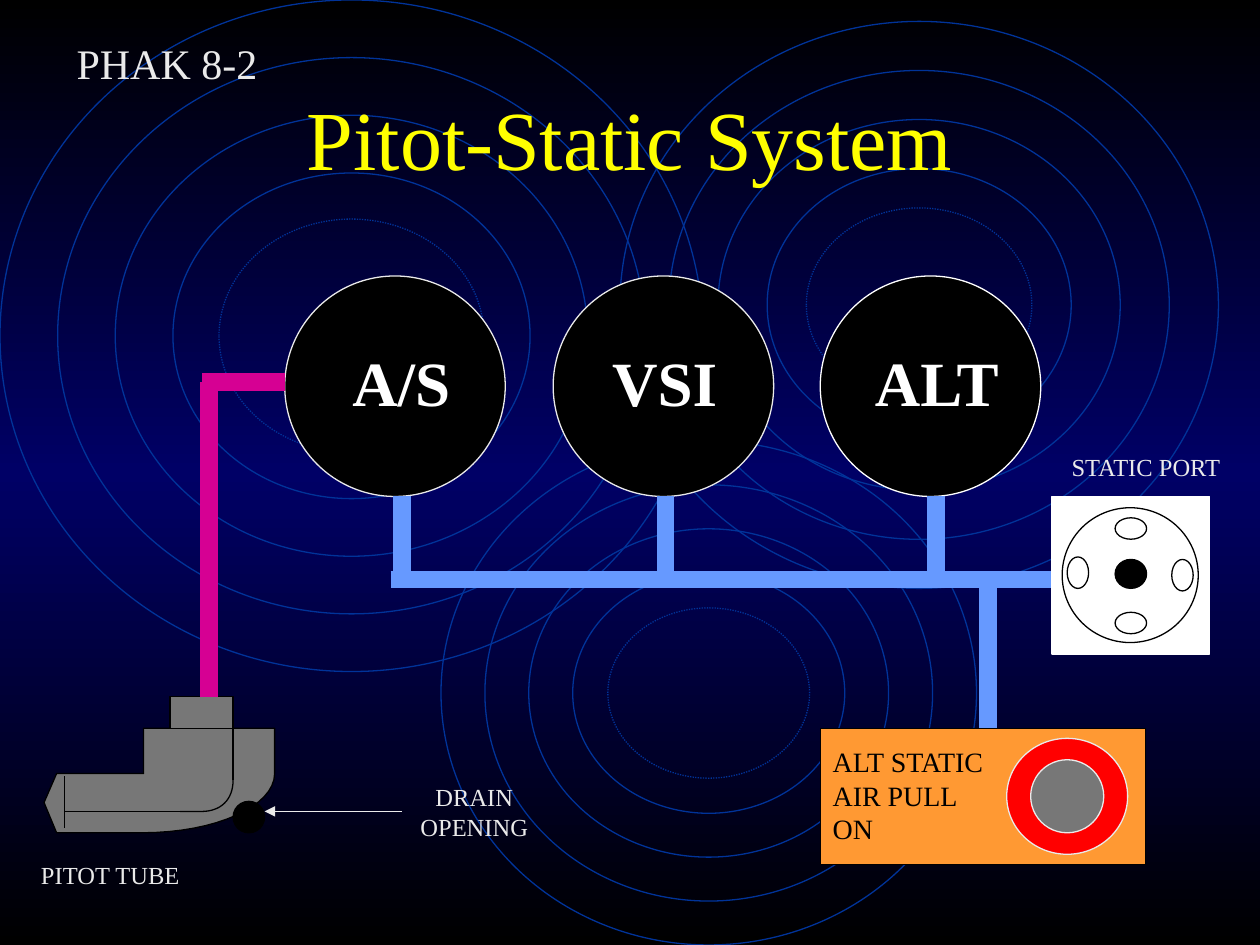
"""Build the Pitot-Static System slide."""
import copy

import lxml.etree
import pptx
import pptx.dml.color
import pptx.enum.dml
import pptx.enum.shapes
import pptx.enum.text
import pptx.oxml.ns
import pptx.util

Inches = pptx.util.Inches
RGBColor = pptx.dml.color.RGBColor
qn = pptx.oxml.ns.qn
OVAL = pptx.enum.shapes.MSO_SHAPE.OVAL
RECTANGLE = pptx.enum.shapes.MSO_SHAPE.RECTANGLE
LEFT = pptx.enum.text.PP_ALIGN.LEFT
CENTER = pptx.enum.text.PP_ALIGN.CENTER

BLACK = RGBColor(0x00, 0x00, 0x00)
WHITE = RGBColor(0xFF, 0xFF, 0xFF)
PALE = RGBColor(0xEA, 0xEA, 0xEA)
NAVY = RGBColor(0x00, 0x00, 0x66)
RING_BLUE = RGBColor(0x00, 0x33, 0x99)
STATIC_BLUE = RGBColor(0x66, 0x99, 0xFF)
PITOT_PINK = RGBColor(0xD6, 0x00, 0x93)
ORANGE = RGBColor(0xFF, 0x99, 0x33)
RED = RGBColor(0xFF, 0x00, 0x00)
GRAY = RGBColor(0x77, 0x77, 0x77)
YELLOW = RGBColor(0xFF, 0xFF, 0x00)
FONT = "Times New Roman"


def paint(shape, fill, line):
    shape.shadow.inherit = False
    if fill is None:
        shape.fill.background()
    else:
        shape.fill.solid()
        shape.fill.fore_color.rgb = fill
    shape.line.color.rgb = line
    shape.line.width = pptx.util.Pt(0.75)
    return shape


def draw_line(start, end, color, width=0.75):
    line = page.shapes.add_connector(
        pptx.enum.shapes.MSO_CONNECTOR.STRAIGHT,
        *[Inches(value) for value in start + end])
    line.line.color.rgb = color
    line.line.width = pptx.util.Pt(width)
    lxml.etree.SubElement(line._element.spPr, qn("a:effectLst"))
    return line


deck = pptx.Presentation()
deck.slide_width, deck.slide_height = Inches(10), Inches(7.5)
page = deck.slides.add_slide(deck.slide_layouts[5])

backdrop = page.background.fill
backdrop.gradient()
backdrop.gradient_angle = 270
stop_list = page._element.find(".//" + qn("a:gsLst"))
stop_list.append(copy.deepcopy(stop_list[0]))
for stop, position, color in zip(backdrop.gradient_stops, (0, 0.5, 1), (BLACK, NAVY, BLACK)):
    stop.position = position
    stop.color.rgb = color

for left, top, width, height in ((0, 0, 5.58, 5.33), (3.5, 3.5, 4.25, 4), (4.92, 0.17, 4.75, 4.5)):
    for step in (0, 1, 2, 3, 3.8):
        inset = step * 0.082 * width
        ring = paint(page.shapes.add_shape(
            OVAL, Inches(left + inset), Inches(top + inset),
            Inches(width - 2 * inset), Inches(height - 2 * inset)), None, RING_BLUE)
    ring.line.dash_style = pptx.enum.dml.MSO_LINE.ROUND_DOT

for left, outline in ((2.26, PALE), (4.39, PALE), (6.51, WHITE)):
    paint(page.shapes.add_shape(OVAL, Inches(left), Inches(2.19), Inches(1.75), Inches(1.75)),
          BLACK, outline)

for x in (3.19, 5.28, 7.43):
    draw_line((x, 3.94), (x, 4.53), STATIC_BLUE, 10)
draw_line((3.1, 4.6), (8.35, 4.6), STATIC_BLUE, 10)
draw_line((7.84, 4.6), (7.84, 5.78), STATIC_BLUE, 10)

static_port = [
    (RECTANGLE, (8.35, 3.94, 1.25, 1.25), WHITE, WHITE),
    (OVAL, (8.43, 4.03, 1.08, 1.07), None, BLACK),
    (OVAL, (8.85, 4.44, 0.25, 0.23), BLACK, BLACK),
    (OVAL, (8.85, 4.11, 0.25, 0.17), None, BLACK),
    (OVAL, (8.85, 4.86, 0.25, 0.17), None, BLACK),
    (OVAL, (8.47, 4.42, 0.17, 0.25), None, BLACK),
    (OVAL, (9.3, 4.44, 0.17, 0.25), None, BLACK),
]
alternate_air = [
    (RECTANGLE, (6.51, 5.78, 2.58, 1.08), ORANGE, BLACK),
    (OVAL, (7.99, 5.86, 0.96, 0.92), RED, PALE),
    (OVAL, (8.18, 6.03, 0.58, 0.58), GRAY, PALE),
]
for preset, bounds, fill, outline in static_port + alternate_air:
    paint(page.shapes.add_shape(preset, *[Inches(value) for value in bounds]), fill, outline)

curves = []
for curve in (((1.13, 6.61), (1.71, 6.61), (2.18, 6.4), (2.18, 6.14)),
              ((1.6, 6.44), (1.75, 6.44), (1.85, 6.35), (1.85, 6.19))):
    curves.append([
        tuple(sum(weight * point[axis] for weight, point in zip(
            ((1 - t) ** 3, 3 * t * (1 - t) ** 2, 3 * t * t * (1 - t), t ** 3), curve))
            for axis in (0, 1))
        for t in (step / 16 for step in range(17))])
belly, bend = curves
tube = [(0.35, 6.37), (0.45, 6.61)] + belly + [(2.18, 5.78), (1.14, 5.78), (1.14, 6.14), (0.45, 6.14)]
for points, closed, fill in ((tube, True, GRAY), ([(1.43, 6.44)] + bend, False, None)):
    points = [(Inches(x), Inches(y)) for x, y in points]
    builder = page.shapes.build_freeform(*points[0])
    builder.add_line_segments(points[1:], close=closed)
    paint(builder.convert_to_shape(), fill, BLACK)

paint(page.shapes.add_shape(RECTANGLE, Inches(1.35), Inches(5.53), Inches(0.5), Inches(0.25)),
      GRAY, BLACK)
draw_line((2.26, 3.03), (1.6, 3.03), PITOT_PINK, 10)
draw_line((1.66, 5.53), (1.66, 3.03), PITOT_PINK, 10)
paint(page.shapes.add_shape(OVAL, Inches(1.85), Inches(6.36), Inches(0.25), Inches(0.25)),
      BLACK, BLACK)
for start, end in (((0.51, 6.16), (0.51, 6.57)), ((1.85, 5.78), (1.85, 6.19)),
                   ((0.51, 6.44), (1.43, 6.44))):
    draw_line(start, end, BLACK)
drain_arrow = draw_line((3.19, 6.44), (2.1, 6.44), PALE)
lxml.etree.SubElement(drain_arrow.line._get_or_add_ln(), qn("a:tailEnd"), type="triangle")

title = page.shapes.title
title.left, title.top, title.width, title.height = Inches(0.75), Inches(0.5), Inches(8.5), Inches(1.17)
title.text_frame.vertical_anchor = pptx.enum.text.MSO_ANCHOR.MIDDLE
page.shapes._spTree.append(title._element)
labels = [(title, "Pitot-Static System", 48, YELLOW, False, CENTER)]
for bounds, text, size, color, bold, alignment in (
        ((2.6, 2.68, 1.17, 0.7), "A/S", 36, WHITE, True, CENTER),
        ((4.69, 2.68, 1.17, 0.7), "VSI", 36, WHITE, True, CENTER),
        ((6.6, 2.68, 1.67, 0.7), "ALT", 36, WHITE, True, CENTER),
        ((6.51, 5.86, 1.42, 0.9), "ALT STATIC AIR PULL ON", 16, BLACK, False, LEFT),
        ((8.31, 3.54, 1.57, 0.33), "STATIC PORT", 14, PALE, False, CENTER),
        ((0.09, 6.78, 1.57, 0.33), "PITOT TUBE", 14, PALE, False, CENTER),
        ((2.98, 6.16, 1.57, 0.57), "DRAIN OPENING", 14, PALE, False, CENTER),
        ((0.09, 0.25, 2.47, 0.5), "PHAK 8-2", 24, PALE, False, CENTER)):
    box = page.shapes.add_textbox(*[Inches(value) for value in bounds])
    labels.append((box, text, size, color, bold, alignment))

for box, text, size, color, bold, alignment in labels:
    box.text_frame.word_wrap = True
    box.text_frame.text = text
    para = box.text_frame.paragraphs[0]
    para.alignment = alignment
    span = para.runs[0]
    span.font.name = FONT
    span.font.size = pptx.util.Pt(size)
    span.font.bold = bold
    span.font.color.rgb = color

deck.save("out.pptx")
